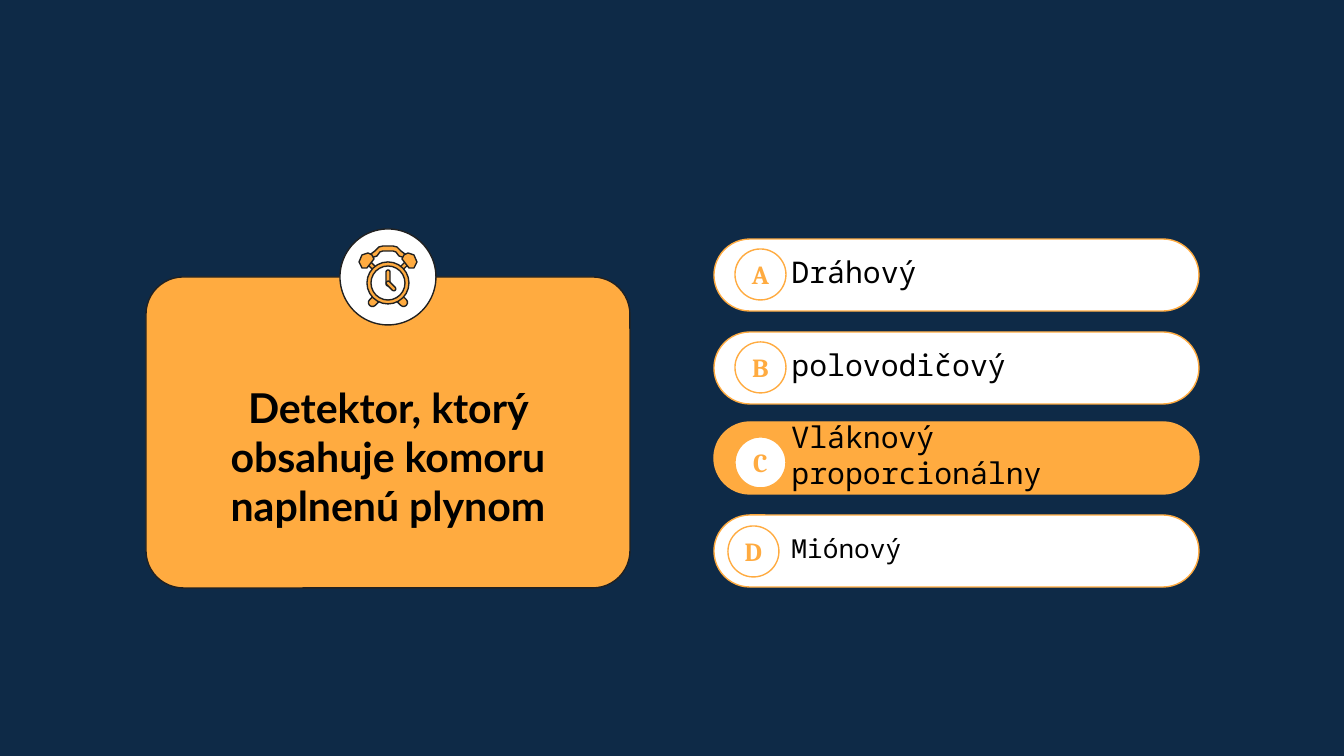
"""Build a quiz slide with a question card, a clock badge and four answers."""
import dataclasses

import pptx
import pptx.dml.color
import pptx.enum.shapes
import pptx.enum.text
import pptx.util

SCALE = 914400 / 134.4
KIND = pptx.enum.shapes.MSO_SHAPE
ALIGN = pptx.enum.text.PP_ALIGN
CLOCK_CENTRE = 388


@dataclasses.dataclass(frozen=True)
class Theme:
    navy: str = "0E2A47"
    orange: str = "FFAB40"
    white: str = "FFFFFF"
    ink: str = "212121"
    black: str = "000000"
    question_font: str = "Lato"
    answer_font: str = "Noto Sans Mono"
    letter_font: str = "Cambria"
    question_size: int = 22
    answer_size: int = 16
    small_size: int = 14
    line_width: float = 0.75


THEME = Theme()

ANSWERS = [
    ("A", "Dráhový", 239, (735, 249), THEME.white, THEME.answer_size),
    ("B", "polovodičový", 332, (735, 342), THEME.white, THEME.answer_size),
    ("C", "Vláknový proporcionálny", 422, (735, 437), THEME.orange, THEME.answer_size),
    ("D", "Miónový", 515, (728, 526), THEME.white, THEME.small_size),
]
HANDLE_HALF = [
    (383, 251), (380, 252), (377, 256), (371, 258), (366, 258),
    (366, 254), (371, 254), (375, 251), (379, 247), (383, 246),
]
BELL = [(374, 259), (367, 268), (362, 268), (359, 262), (362, 255), (368, 253), (372, 255)]


def px(value):
    return pptx.util.Emu(round(value * SCALE))


def rgb(colour):
    return pptx.dml.color.RGBColor.from_string(colour)


def paint(shape, fill, line):
    shape.shadow.inherit = False
    shape.fill.solid()
    shape.fill.fore_color.rgb = rgb(fill)
    shape.line.color.rgb = rgb(line)
    shape.line.width = pptx.util.Pt(THEME.line_width)


def add_shape(shapes, kind, box, fill, line, corner=None):
    shape = shapes.add_shape(kind, *(px(value) for value in box))
    paint(shape, fill, line)
    if corner is not None:
        shape.adjustments[0] = corner
    return shape


def add_text(shape, text, font, size, colour, insets, align=ALIGN.LEFT, bold=False):
    frame = shape.text_frame
    frame.word_wrap = True
    frame.vertical_anchor = pptx.enum.text.MSO_ANCHOR.MIDDLE
    frame.margin_left, frame.margin_top, frame.margin_right, frame.margin_bottom = (
        px(inset) for inset in insets
    )
    paragraph = frame.paragraphs[0]
    paragraph.alignment = align
    run = paragraph.add_run()
    run.text = text
    run.font.name = font
    run.font.size = pptx.util.Pt(size)
    run.font.bold = bold
    run.font.color.rgb = rgb(colour)


def add_outline(shapes, points):
    builder = shapes.build_freeform(*points[0], scale=SCALE)
    builder.add_line_segments(points[1:], close=True)
    paint(builder.convert_to_shape(), THEME.orange, THEME.ink)


def add_bar(shapes, centre, length, thickness, angle):
    box = (centre[0] - length / 2, centre[1] - thickness / 2, length, thickness)
    bar = add_shape(shapes, KIND.ROUNDED_RECTANGLE, box, THEME.orange, THEME.ink, 0.5)
    bar.rotation = angle


def mirror(points):
    return [(2 * CLOCK_CENTRE - x, y) for x, y in points]


def add_clock(slide):
    shapes = slide.shapes.add_group_shape().shapes
    add_outline(shapes, HANDLE_HALF + mirror(HANDLE_HALF)[::-1])
    for side in (-1, 1):
        add_bar(shapes, (CLOCK_CENTRE + side * 15, 267), 12, 4, -side * 45)
        add_bar(shapes, (CLOCK_CENTRE + side * 12, 299), 18, 8, side * 45)
    add_shape(shapes, KIND.OVAL, (367, 262, 42, 42), THEME.orange, THEME.ink)
    add_shape(shapes, KIND.OVAL, (371, 266, 34, 34), THEME.white, THEME.ink)
    add_bar(shapes, (388, 278), 16, 4, 90)
    add_bar(shapes, (391, 286), 12, 4, 45)
    for bell in (BELL, mirror(BELL)):
        add_outline(shapes, bell)


def add_question(slide, text):
    card = add_shape(slide.shapes, KIND.ROUNDED_RECTANGLE, (146, 277, 484, 311),
                     THEME.orange, THEME.ink, 0.12)
    add_text(card, text, THEME.question_font, THEME.question_size, THEME.black,
             (40, 60, 40, 13), ALIGN.CENTER, True)
    add_shape(slide.shapes, KIND.OVAL, (340, 229, 96, 96), THEME.white, THEME.ink)


def add_answer(slide, letter, text, top, badge_corner, fill, size):
    pill = add_shape(slide.shapes, KIND.ROUNDED_RECTANGLE, (714, top, 485, 72),
                     fill, THEME.orange, 0.5)
    add_text(pill, text, THEME.answer_font, size, THEME.black, (67, 7, 13, 13))
    badge = add_shape(slide.shapes, KIND.OVAL, (*badge_corner, 51, 51),
                      THEME.white, THEME.orange)
    add_text(badge, letter, THEME.letter_font, THEME.small_size, THEME.orange,
             (0, 13, 0, 13), ALIGN.CENTER, True)


def main():
    presentation = pptx.Presentation()
    presentation.slide_width, presentation.slide_height = px(1344), px(756)
    slide = presentation.slides.add_slide(presentation.slide_layouts[6])
    slide.background.fill.solid()
    slide.background.fill.fore_color.rgb = rgb(THEME.navy)
    add_question(slide, "Detektor, ktorý obsahuje komoru naplnenú plynom")
    add_clock(slide)
    for answer in ANSWERS:
        add_answer(slide, *answer)
    presentation.save("out.pptx")


if __name__ == "__main__":
    main()
